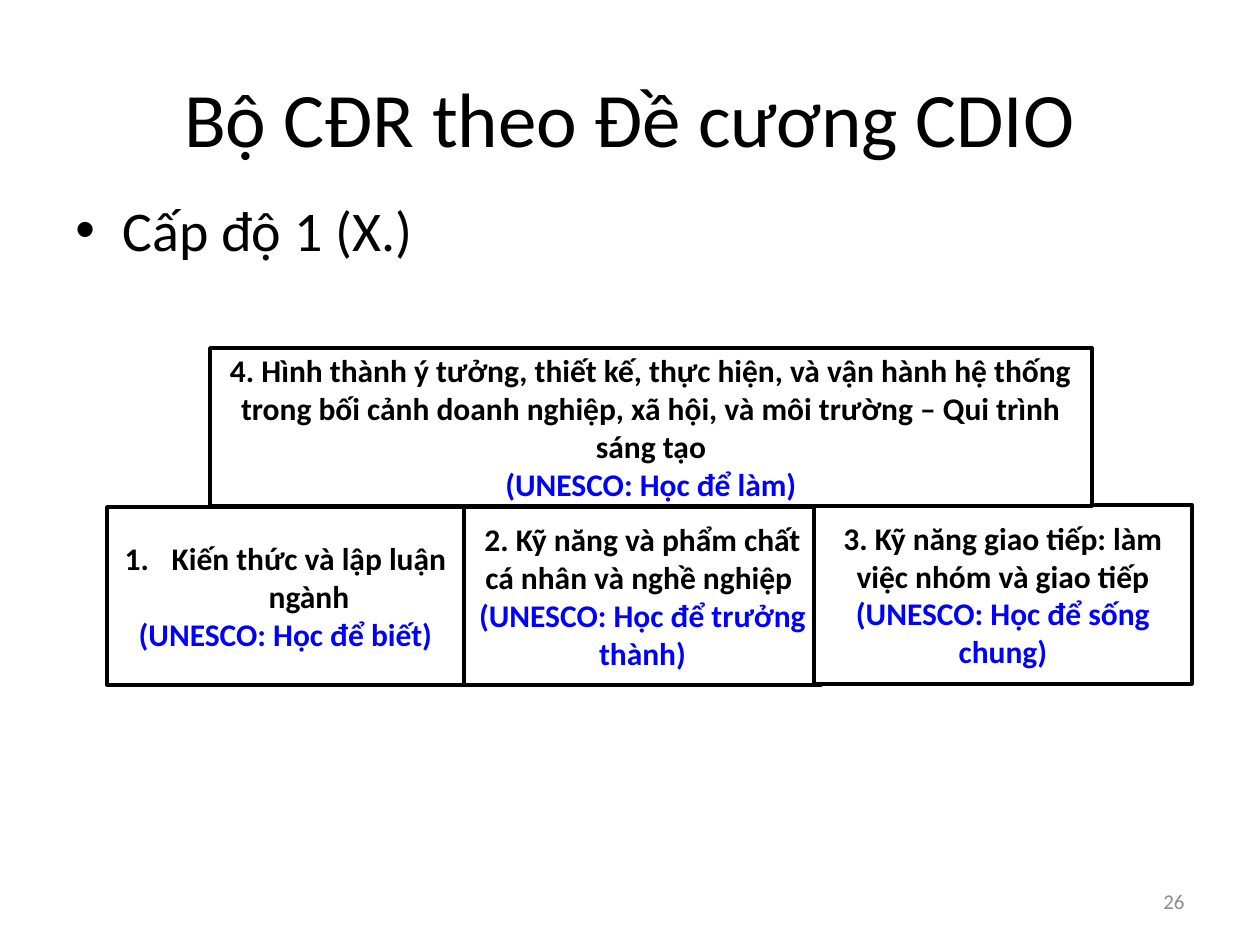
from dataclasses import dataclass

from lxml import etree
from pptx import Presentation
from pptx.dml.color import RGBColor
from pptx.enum.shapes import MSO_SHAPE
from pptx.enum.text import MSO_ANCHOR, PP_ALIGN
from pptx.oxml.ns import qn
from pptx.slide import Slide
from pptx.text.text import TextFrame, _Paragraph
from pptx.util import Emu, Pt

RECT = MSO_SHAPE.RECTANGLE
MID, TOP = MSO_ANCHOR.MIDDLE, MSO_ANCHOR.TOP
LEFT, MIDDLE, RIGHT = PP_ALIGN.LEFT, PP_ALIGN.CENTER, PP_ALIGN.RIGHT
DPI = 126


@dataclass(frozen=True)
class Theme:
    """Hold the colours and type sizes of the slide."""
    font: str = "Calibri"
    ink: str = "000000"
    paper: str = "FFFFFF"
    blue: str = "0000FF"
    gray: str = "8C8C8C"
    title: int = 44
    body: int = 32
    box: int = 18
    foot: int = 12
    line: int = 2


@dataclass(frozen=True)
class Area:
    """Give a place in px."""
    left: int
    top: int
    width: int
    height: int

    def emu(self) -> tuple[Emu, ...]:
        """Return the place in EMU."""
        return tuple(map(px, (self.left, self.top, self.width, self.height)))


@dataclass(frozen=True)
class Block:
    """Describe one skill group and its learning pillar."""
    area: Area
    skill: str
    pillar: str
    listed: bool = False


THEME = Theme()
INDENT = 47
BLOCKS = (
    Block(Area(107, 507, 357, 178), "Kiến thức và lập luận ngành",
          "(UNESCO: Học để biết)", True),
    Block(Area(464, 507, 357, 178),
          "2. Kỹ năng và phẩm chất cá nhân và nghề nghiệp ",
          "(UNESCO: Học để trưởng thành)"),
    Block(Area(814, 505, 378, 179),
          "3. Kỹ năng giao tiếp: làm việc nhóm và giao tiếp",
          "(UNESCO: Học để sống chung)"),
    Block(Area(210, 348, 882, 158),
          "4. Hình thành ý tưởng, thiết kế, thực hiện, và vận hành hệ thống "
          "trong bối cảnh doanh nghiệp, xã hội, và môi trường – Qui trình sáng tạo",
          "(UNESCO: Học để làm)"),
)


def px(size: int) -> Emu:
    """Turn px into EMU."""
    return Emu(round(size * 914400 / DPI))


def style(para: _Paragraph, size: int, color: str, align: PP_ALIGN,
          bold: bool = False) -> None:
    """Format a paragraph and its runs."""
    para.alignment = align
    for run in para.runs:
        font = run.font
        font.name, font.size, font.bold = THEME.font, Pt(size), bold
        font.color.rgb = RGBColor.from_string(color)


def mark(para: _Paragraph, tag: str, **attrs: str) -> None:
    """Give a paragraph a hanging bullet or number."""
    props = para._p.get_or_add_pPr()
    props.set("marL", str(px(INDENT)))
    props.set("indent", str(-px(INDENT)))
    if tag == "a:buChar":
        etree.SubElement(props, qn("a:buFont"), typeface="Arial")
    etree.SubElement(props, qn(tag), **attrs)


def label(slide: Slide, area: Area, text: str, size: int, color: str,
          align: PP_ALIGN, anchor: MSO_ANCHOR) -> _Paragraph:
    """Add a line of text and return its paragraph."""
    frame: TextFrame = slide.shapes.add_textbox(*area.emu()).text_frame
    frame.word_wrap = True
    frame.vertical_anchor = anchor
    frame.text = text
    para = frame.paragraphs[0]
    style(para, size, color, align)
    return para


def draw(slide: Slide, block: Block) -> None:
    """Draw a framed block."""
    shape = slide.shapes.add_shape(RECT, *block.area.emu())
    shape.shadow.inherit = False
    shape.fill.solid()
    shape.fill.fore_color.rgb = RGBColor.from_string(THEME.paper)
    shape.line.color.rgb = RGBColor.from_string(THEME.ink)
    shape.line.width = Pt(THEME.line)
    frame = shape.text_frame
    frame.word_wrap = True
    frame.vertical_anchor = MID
    frame.text = f"{block.skill}\n{block.pillar}"
    for para, color in zip(frame.paragraphs, (THEME.ink, THEME.blue)):
        style(para, THEME.box, color, MIDDLE, True)
    if block.listed:
        mark(frame.paragraphs[0], "a:buAutoNum", type="arabicPeriod")


def main() -> None:
    """Build and save the slide."""
    deck = Presentation()
    deck.slide_width, deck.slide_height = px(1260), px(945)
    slide = deck.slides.add_slide(deck.slide_layouts[5])
    title = slide.shapes.title
    title.left, title.top, title.width, title.height = Area(63, 38, 1134, 157).emu()
    title.text_frame.text = "Bộ CĐR theo Đề cương CDIO"
    title.text_frame.vertical_anchor = MID
    style(title.text_frame.paragraphs[0], THEME.title, THEME.ink, MIDDLE)
    level = label(slide, Area(63, 189, 1134, 624), "Cấp độ 1 (X.)",
                  THEME.body, THEME.ink, LEFT, TOP)
    level.space_before = Pt(6)
    mark(level, "a:buChar", char="•")
    label(slide, Area(903, 876, 294, 50), "26", THEME.foot, THEME.gray, RIGHT, MID)
    for block in BLOCKS:
        draw(slide, block)
    deck.save("out.pptx")


if __name__ == "__main__":
    main()
